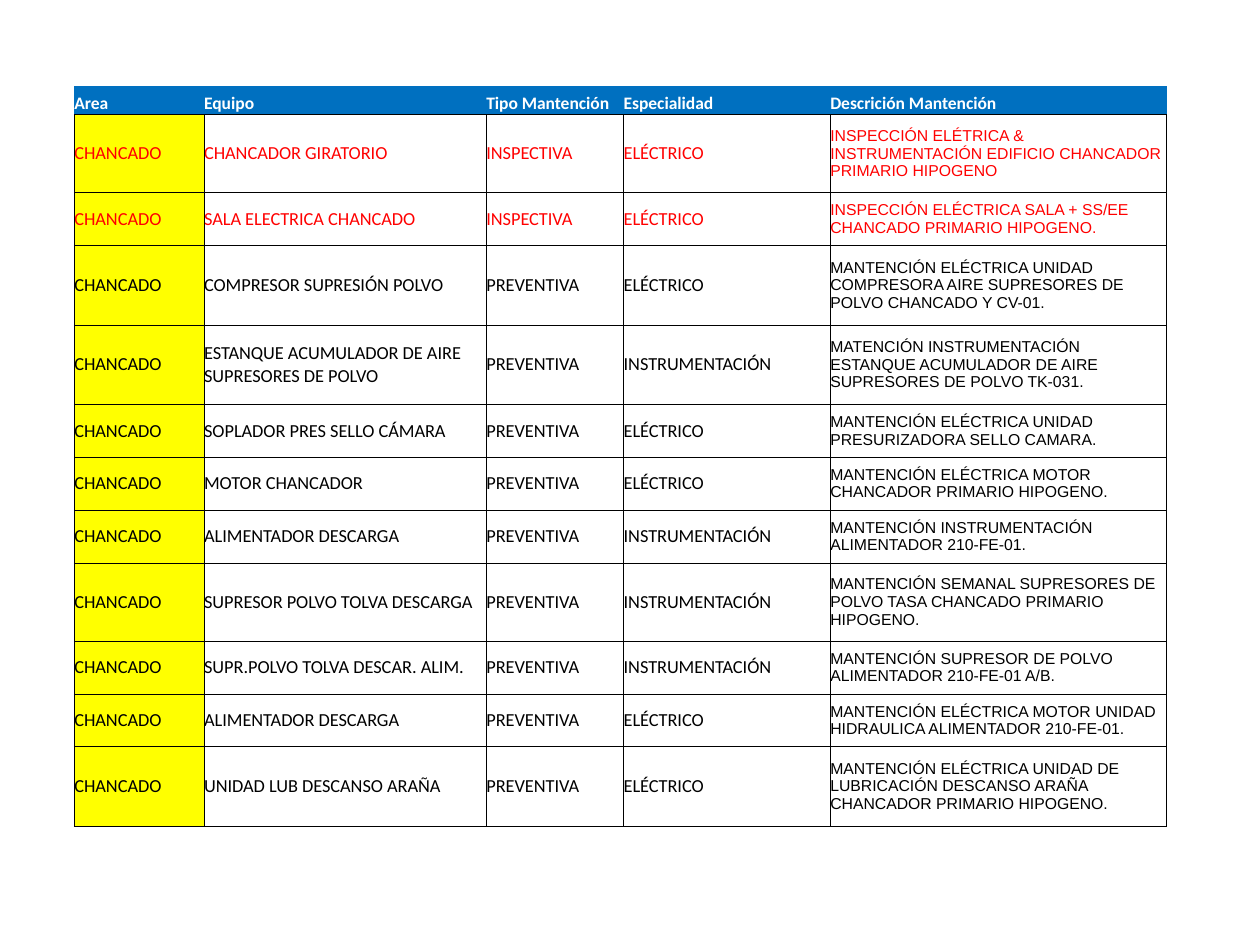
from dataclasses import dataclass

from lxml.etree import SubElement
from pptx import Presentation
from pptx.dml.color import RGBColor
from pptx.enum.text import MSO_ANCHOR
from pptx.oxml.ns import qn
from pptx.util import Inches, Pt

HEADERS = ["Area", "Equipo", "Tipo Mantención", "Especialidad", "Descrición Mantención"]
AREA = "CHANCADO"
INSPECTION, PREVENTIVE = "INSPECTIVA", "PREVENTIVA"
ELECTRICAL, INSTRUMENTS = "ELÉCTRICO", "INSTRUMENTACIÓN"
TASKS = [
    (0.62, "CHANCADOR GIRATORIO", INSPECTION, ELECTRICAL,
     "INSPECCIÓN ELÉTRICA & INSTRUMENTACIÓN EDIFICIO CHANCADOR PRIMARIO HIPOGENO"),
    (0.42, "SALA ELECTRICA CHANCADO", INSPECTION, ELECTRICAL,
     "INSPECCIÓN ELÉCTRICA SALA + SS/EE CHANCADO PRIMARIO HIPOGENO."),
    (0.63, "COMPRESOR SUPRESIÓN POLVO", PREVENTIVE, ELECTRICAL,
     "MANTENCIÓN ELÉCTRICA UNIDAD COMPRESORA AIRE SUPRESORES DE POLVO CHANCADO Y CV-01."),
    (0.63, "ESTANQUE ACUMULADOR DE AIRE SUPRESORES DE POLVO", PREVENTIVE, INSTRUMENTS,
     "MATENCIÓN INSTRUMENTACIÓN ESTANQUE ACUMULADOR DE AIRE SUPRESORES DE POLVO TK-031."),
    (0.42, "SOPLADOR PRES SELLO CÁMARA", PREVENTIVE, ELECTRICAL,
     "MANTENCIÓN ELÉCTRICA UNIDAD PRESURIZADORA SELLO CAMARA."),
    (0.42, "MOTOR CHANCADOR", PREVENTIVE, ELECTRICAL,
     "MANTENCIÓN ELÉCTRICA MOTOR CHANCADOR PRIMARIO HIPOGENO."),
    (0.42, "ALIMENTADOR DESCARGA", PREVENTIVE, INSTRUMENTS,
     "MANTENCIÓN INSTRUMENTACIÓN ALIMENTADOR 210-FE-01."),
    (0.62, "SUPRESOR POLVO TOLVA DESCARGA", PREVENTIVE, INSTRUMENTS,
     "MANTENCIÓN SEMANAL SUPRESORES DE POLVO TASA CHANCADO PRIMARIO HIPOGENO."),
    (0.42, "SUPR.POLVO TOLVA DESCAR. ALIM.", PREVENTIVE, INSTRUMENTS,
     "MANTENCIÓN SUPRESOR DE POLVO ALIMENTADOR 210-FE-01 A/B."),
    (0.42, "ALIMENTADOR DESCARGA", PREVENTIVE, ELECTRICAL,
     "MANTENCIÓN ELÉCTRICA MOTOR UNIDAD HIDRAULICA ALIMENTADOR 210-FE-01."),
    (0.63, "UNIDAD LUB DESCANSO ARAÑA", PREVENTIVE, ELECTRICAL,
     "MANTENCIÓN ELÉCTRICA UNIDAD DE LUBRICACIÓN DESCANSO ARAÑA CHANCADOR PRIMARIO HIPOGENO."),
]
COLUMN_WIDTHS = [1.03, 2.24, 1.09, 1.64, 2.67]
HEADER_HEIGHT = 0.23


@dataclass(frozen=True)
class Theme:
    """Colours, fonts and type sizes of the slide."""

    header_fill: str = "0070C0"
    header_text: str = "FFFFFF"
    area_fill: str = "FFFF00"
    inspection_text: str = "FF0000"
    text: str = "000000"
    border: str = "000000"
    border_width: float = 0.5
    body_font: str = "Calibri"
    description_font: str = "Arial"
    header_size: float = 10
    body_size: float = 10.5
    description_size: float = 9


class MaintenanceSlide:
    """Draws the maintenance plan on one slide in one theme."""

    def __init__(self, slide, theme):
        """Keep the slide and its theme."""
        self.slide = slide
        self.theme = theme

    def add_table(self, left, top, widths, heights):
        """Add an unbanded table with the given column widths and row heights."""
        frame = self.slide.shapes.add_table(
            len(heights), len(widths), Inches(left), Inches(top),
            Inches(sum(widths)), Inches(sum(heights)))
        table = frame.table
        table.first_row = table.horz_banding = False
        for column, width in zip(table.columns, widths):
            column.width = Inches(width)
        for row, height in zip(table.rows, heights):
            row.height = Inches(height)
        return table

    def border_cell(self, cell, sides):
        """Rule the named sides of a cell and clear the others."""
        properties = cell._tc.get_or_add_tcPr()
        for side in "LRTB":
            line = SubElement(properties, qn(f"a:ln{side}"), w=str(Pt(self.theme.border_width)))
            if side in sides:
                fill = SubElement(line, qn("a:solidFill"))
                SubElement(fill, qn("a:srgbClr"), val=self.theme.border)
            else:
                SubElement(line, qn("a:noFill"))

    def write_cell(self, cell, text, font, color, anchor, fill=None, sides="LRTB"):
        """Fill one cell with text in the given format."""
        layout = {"vertical_anchor": anchor, "margin_left": 0, "margin_right": 0,
                  "margin_top": 0, "margin_bottom": 0}
        for name, value in layout.items():
            setattr(cell, name, value)
        self.border_cell(cell, sides)
        if fill:
            cell.fill.solid()
            cell.fill.fore_color.rgb = RGBColor.from_string(fill)
        else:
            cell.fill.background()
        run = cell.text_frame.paragraphs[0].add_run()
        run.text = text
        for name, value in font.items():
            setattr(run.font, name, value)
        run.font.color.rgb = RGBColor.from_string(color)

    def add_plan(self, left, top):
        """Add the whole maintenance plan."""
        theme = self.theme
        header = {"name": theme.body_font, "size": Pt(theme.header_size), "bold": True}
        body = {"name": theme.body_font, "size": Pt(theme.body_size), "bold": False}
        description = {"name": theme.description_font,
                       "size": Pt(theme.description_size), "bold": False}
        heights = [HEADER_HEIGHT] + [task[0] for task in TASKS]
        table = self.add_table(left, top, COLUMN_WIDTHS, heights)
        for column, text in enumerate(HEADERS):
            self.write_cell(table.cell(0, column), text, header, theme.header_text,
                            MSO_ANCHOR.BOTTOM, theme.header_fill, "B")
        fonts = [body] * 4 + [description]
        fills = [theme.area_fill] + [None] * 4
        for row, (_, *values) in enumerate(TASKS, start=1):
            color = theme.inspection_text if INSPECTION in values else theme.text
            for column, (text, font, fill) in enumerate(zip([AREA, *values], fonts, fills)):
                self.write_cell(table.cell(row, column), text, font, color,
                                MSO_ANCHOR.MIDDLE, fill)


def main():
    """Build and save the presentation."""
    presentation = Presentation()
    presentation.slide_width, presentation.slide_height = Inches(10), Inches(7.5)
    slide = presentation.slides.add_slide(presentation.slide_layouts[6])
    MaintenanceSlide(slide, Theme()).add_plan(0.59, 0.68)
    presentation.save("out.pptx")


if __name__ == "__main__":
    main()
